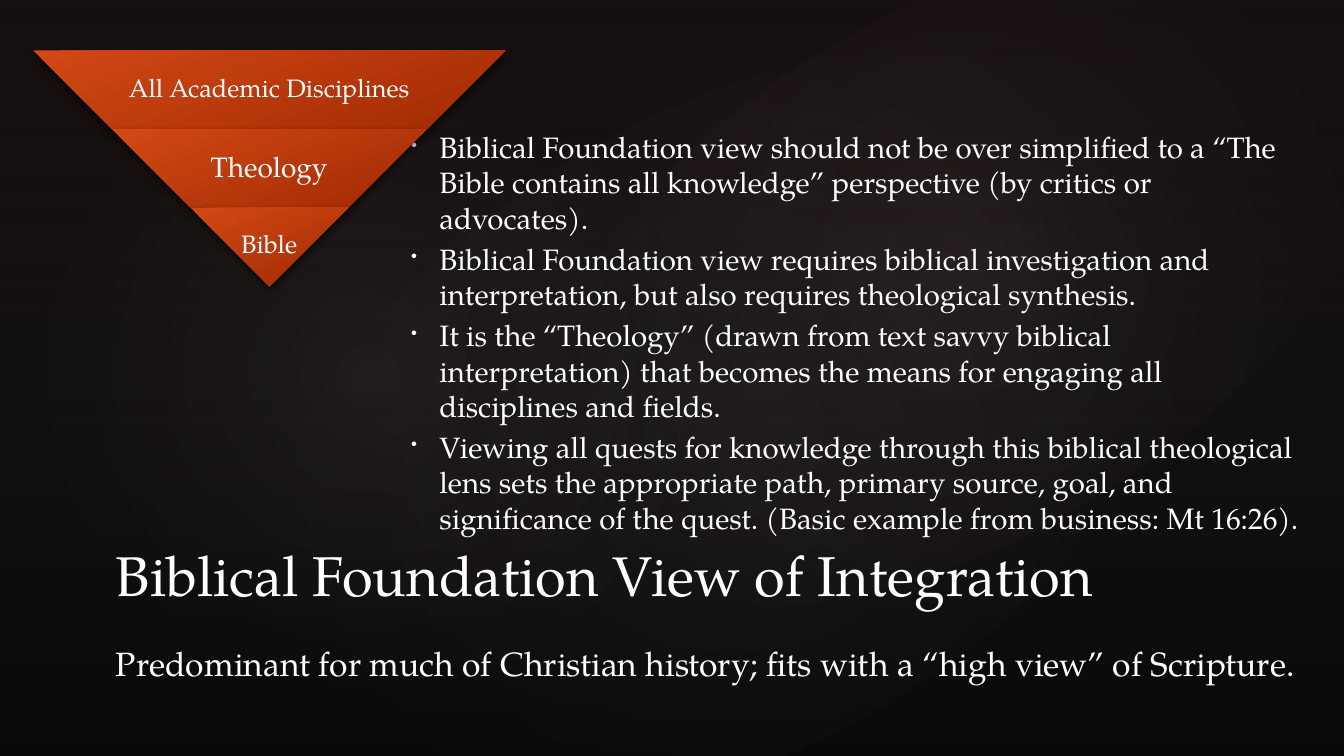
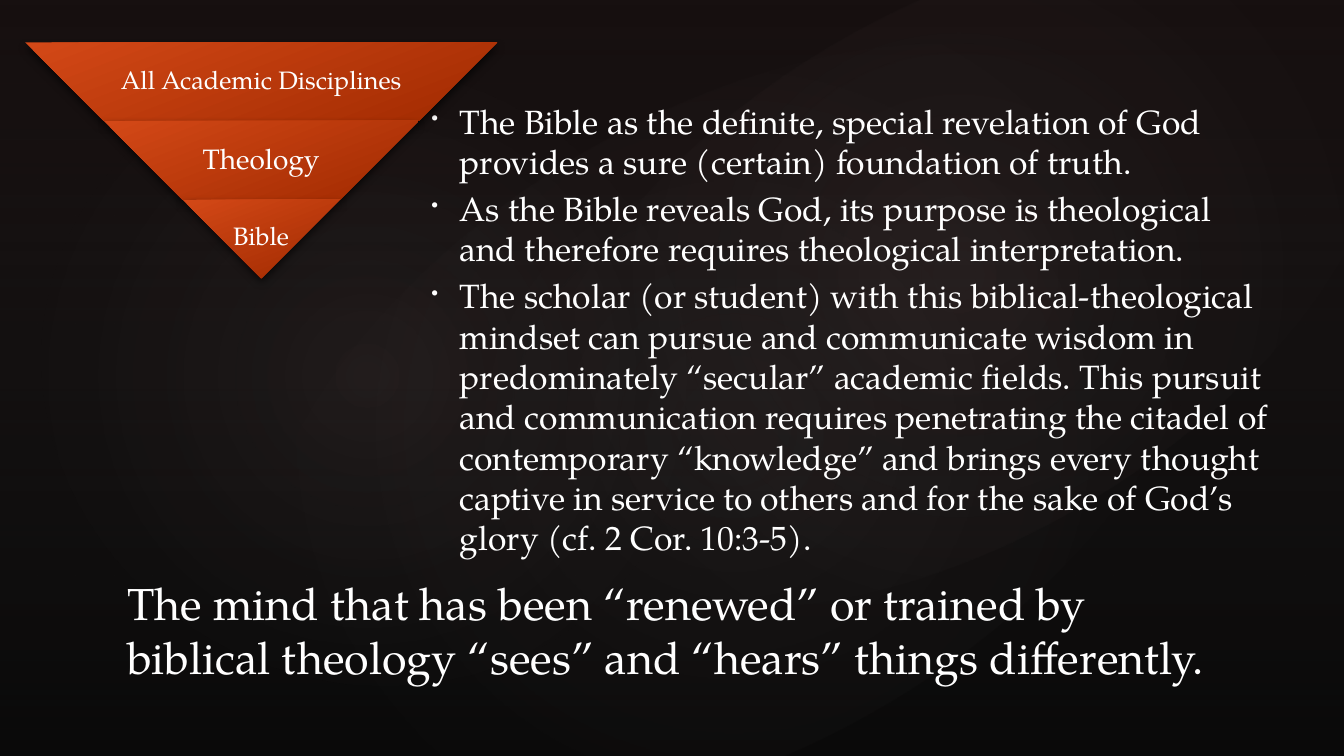
from lxml.etree import SubElement
from pptx import Presentation
from pptx.dml.color import RGBColor
from pptx.enum.shapes import MSO_SHAPE
from pptx.enum.text import MSO_ANCHOR, MSO_AUTO_SIZE, PP_ALIGN
from pptx.oxml import parse_xml
from pptx.oxml.ns import nsdecls, qn
from pptx.util import Inches, Pt

FONT = "TeX Gyre Pagella"
BLACK = RGBColor(0x00, 0x00, 0x00)
WHITE = RGBColor(0xFF, 0xFF, 0xFF)
ORANGE = RGBColor(0xD3, 0x48, 0x17)
RUST = RGBColor(0xA0, 0x2A, 0x00)
MAROON = RGBColor(0x42, 0x2E, 0x2E)
ROSE = RGBColor(0xB9, 0x9B, 0x9B)
GREY = RGBColor(0x69, 0x64, 0x64)

# Glow: left, top, width, height, rotation, centre opacity
GLOWS = [
    (2, 1.14, 10.56, 6.24, 328.7, 7),
    (0.61, 0.46, 6.06, 6.53, 294.3, 8),
    (4.78, 0.13, 9.45, 5.2, 328.7, 8),
]

# Tier: label, text size, label width, top inset
TIERS = [
    ("All Academic Disciplines", 18, 3.03, 0.03),
    ("Theology", 20, 2.02, 0.03),
    ("Bible", 18, 1.56, 0),
]
TIER_HEIGHT = 0.78
PYRAMID_WIDTH = 2 * TIER_HEIGHT * len(TIERS)

SLIDES = [
    {
        "title": "Biblical Foundation View of Integration",
        "title_size": 40,
        "title_at": (1.05, 5.08),
        "pyramid_at": (0.33, 0.5),
        "body_at": (3.96, 1.42, 9.1, 3.75),
        "body_size": 21,
        "points": [
            "Biblical Foundation view should not be over simplified to a “The Bible "
            "contains all knowledge” perspective (by critics or advocates).",
            "Biblical Foundation view requires biblical investigation and "
            "interpretation, but also requires theological synthesis.",
            "It is the “Theology” (drawn from text savvy biblical interpretation) "
            "that becomes the means for engaging all disciplines and fields.",
            "Viewing all quests for knowledge through this biblical theological lens "
            "sets the appropriate path, primary source, goal, and significance of "
            "the quest. (Basic example from business: Mt 16:26).",
        ],
        "subtitle": "Predominant for much of Christian history; fits with a "
                    "“high view” of Scripture.",
    },
    {
        "title": "The mind that has been “renewed” or trained by biblical theology "
                 "“sees” and “hears” things differently.",
        "title_size": 32,
        "title_at": (1.16, 5.83),
        "pyramid_at": (0.25, 0.42),
        "body_at": (4.16, 1.1, 8.58, 4.33),
        "body_size": 24,
        "points": [
            "The Bible as the definite, special revelation of God provides a sure "
            "(certain) foundation of truth.",
            "As the Bible reveals God, its purpose is theological and therefore "
            "requires theological interpretation.",
            "The scholar (or student) with this biblical-theological mindset can "
            "pursue and communicate wisdom in predominately “secular” academic "
            "fields. This pursuit and communication requires penetrating the citadel "
            "of contemporary “knowledge” and brings every thought captive in service "
            "to others and for the sake of God’s glory (cf. 2 Cor. 10:3-5).",
        ],
        "subtitle": None,
    },
]


def add_gradient_shape(shapes, kind, at, stops, angle=None):
    """Add a lineless shape; stops are (position, colour, opacity) in percent.

    Without an angle the gradient runs outward from the centre.
    """
    shape = shapes.add_shape(kind, *map(Inches, at))
    shape.shadow.inherit = False
    shape.line.fill.background()
    shape.fill.gradient()
    stop_xml = "".join(
        f'<a:gs pos="{position * 1000}"><a:srgbClr val="{color}">'
        f'<a:alpha val="{opacity * 1000}"/></a:srgbClr></a:gs>'
        for position, color, opacity in stops
    )
    if angle is None:
        direction = ('<a:path path="circle"><a:fillToRect l="50000" t="50000" '
                     'r="50000" b="50000"/></a:path>')
    else:
        direction = f'<a:lin ang="{angle * 60000}" scaled="0"/>'
    gradient = parse_xml(
        f'<a:gradFill {nsdecls("a")} rotWithShape="0">'
        f'<a:gsLst>{stop_xml}</a:gsLst>{direction}</a:gradFill>'
    )
    properties = shape.element.spPr
    properties.replace(properties.find(qn("a:gradFill")), gradient)
    return shape


def write(box, lines, size, anchor=MSO_ANCHOR.TOP, align=PP_ALIGN.LEFT):
    """Fill a box with one paragraph per line and return the paragraphs."""
    frame = box.text_frame
    frame.text = "\n".join(lines)
    frame.word_wrap = True
    frame.auto_size = MSO_AUTO_SIZE.NONE
    frame.vertical_anchor = anchor
    for para in frame.paragraphs:
        para.alignment = align
        for span in para.runs:
            span.font.name = FONT
            span.font.size = Pt(size)
            span.font.color.rgb = WHITE
    return frame.paragraphs


deck = Presentation()
deck.slide_width = Inches(13.33)
deck.slide_height = Inches(7.5)
layout = deck.slide_layouts[5]
layout.background.fill.solid()
layout.background.fill.fore_color.rgb = BLACK
pages = [deck.slides.add_slide(layout) for _ in SLIDES]

# Shared backdrop: drawn on the first page, then moved behind the layout
shapes = pages[0].shapes
backdrop = [add_gradient_shape(shapes, MSO_SHAPE.RECTANGLE, (0, 0, 13.33, 7.5),
                               [(0, MAROON, 36), (100, GREY, 10)], angle=90)]
for *at, rotation, opacity in GLOWS:
    glow = add_gradient_shape(shapes, MSO_SHAPE.OVAL, at,
                              [(0, ROSE, opacity), (58, GREY, 0)])
    glow.rotation = rotation
    backdrop.append(glow)
for index, shape in enumerate(backdrop):
    layout.shapes.element.insert(2 + index, shape.element)

for page, content in zip(pages, SLIDES):
    shapes = page.shapes

    title = shapes.title
    title.left, title.top = map(Inches, content["title_at"])
    title.width, title.height = Inches(11), Inches(1)
    write(title, [content["title"]], content["title_size"], MSO_ANCHOR.BOTTOM)

    body = shapes.add_textbox(*map(Inches, content["body_at"]))
    size = content["body_size"]
    for para in write(body, content["points"], size, MSO_ANCHOR.MIDDLE):
        para.space_before = Pt(size * 0.2)
        bullet = para._p.get_or_add_pPr()
        bullet.set("marL", str(Inches(0.3)))
        bullet.set("indent", str(Inches(-0.28)))
        SubElement(bullet, qn("a:buSzPct"), val="60000")
        SubElement(bullet, qn("a:buChar"), char="•")

    if content["subtitle"]:
        subtitle = shapes.add_textbox(Inches(1.05), Inches(6.33),
                                      Inches(11.98), Inches(0.5))
        write(subtitle, [content["subtitle"]], 24)
        subtitle.text_frame.word_wrap = False
        subtitle.text_frame.auto_size = MSO_AUTO_SIZE.SHAPE_TO_FIT_TEXT

    left, top = content["pyramid_at"]
    center = left + PYRAMID_WIDTH / 2
    for row, (label, size, label_width, top_inset) in enumerate(TIERS):
        tier_top = top + row * TIER_HEIGHT
        inset = row * TIER_HEIGHT
        tier = add_gradient_shape(
            shapes, MSO_SHAPE.TRAPEZOID,
            (left + inset, tier_top, PYRAMID_WIDTH - 2 * inset, TIER_HEIGHT),
            [(0, ORANGE, 100), (100, RUST, 100)], angle=69)
        tier.rotation = 180
        tier.adjustments[0] = 1
        shadow = SubElement(tier.element.spPr.find(qn("a:effectLst")),
                            qn("a:outerShdw"), blurRad=str(Pt(6)),
                            dist=str(Pt(3)), dir="5400000", rotWithShape="0")
        shade = SubElement(shadow, qn("a:srgbClr"), val=str(BLACK))
        SubElement(shade, qn("a:alpha"), val="60000")

        box = shapes.add_textbox(Inches(center - label_width / 2), Inches(tier_top),
                                 Inches(label_width), Inches(TIER_HEIGHT))
        frame = box.text_frame
        frame.margin_left = frame.margin_right = frame.margin_bottom = Inches(0.03)
        frame.margin_top = Inches(top_inset)
        para = write(box, [label], size, MSO_ANCHOR.MIDDLE, PP_ALIGN.CENTER)[0]
        para.line_spacing = 0.9

deck.save("out.pptx")
